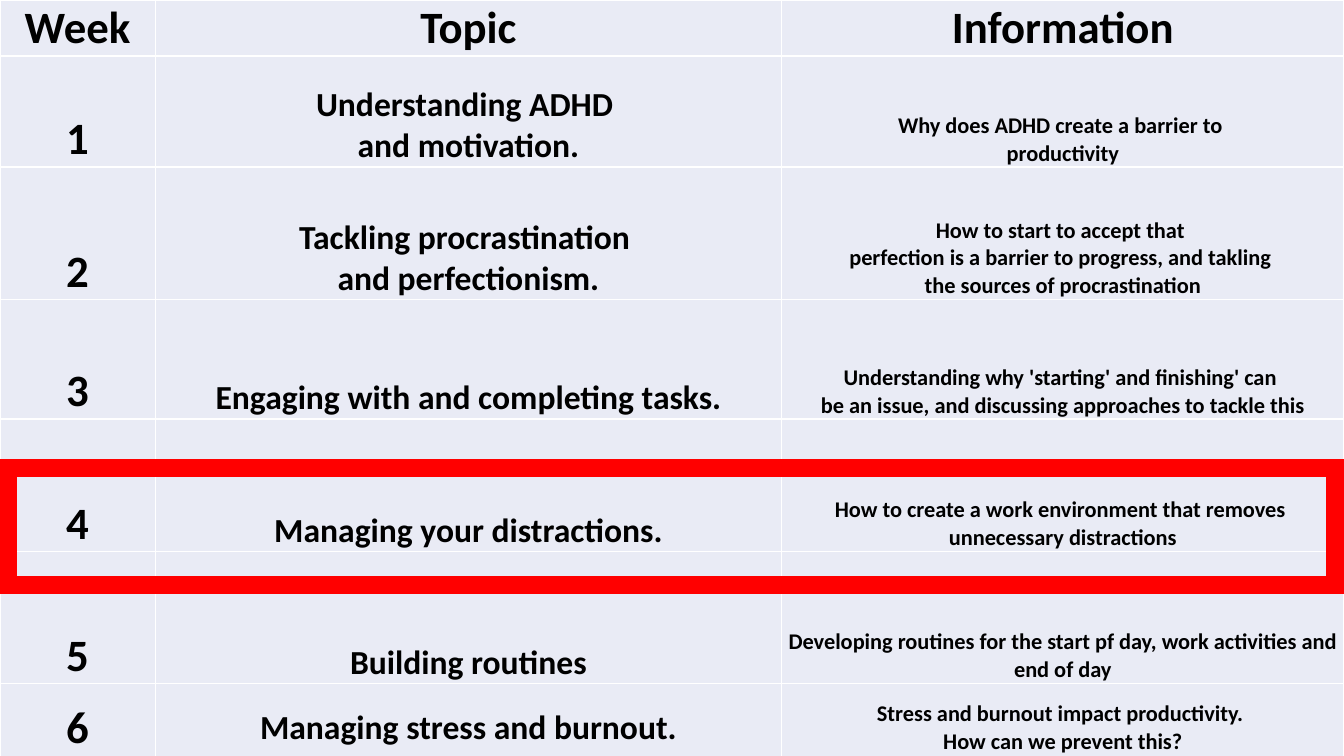
from copy import deepcopy

from lxml import etree
from pptx import Presentation
from pptx import util as u
from pptx.dml import color
from pptx.enum import shapes, text
from pptx.oxml import ns

COLOURS = {"text": "000000", "cell": "E9EBF5", "border": "FFFFFF", "highlight": "FF0000"}
SLIDE_SIZE = (u.Cm(33.87), u.Cm(19.05))
COLUMN_WIDTHS = (3.91, 15.79, 14.17)
ROW_HEIGHTS = (1.04, 2.8, 3.33, 3.02, 3.33, 3.33, 2.21)
HEADER_SIZES = (32, 32, 32)
BODY_SIZES = (32, 24, 16)
FONT = {"name": "Calibri", "bold": True}
CELL = {"margin_left": u.Cm(0.03), "margin_right": u.Cm(0.03),
        "margin_top": u.Cm(0.03), "margin_bottom": u.Cm(0)}

HEADER = ("Week", "Topic", "Information")
# Topic and information for each week, in order
WEEKS = (
    ("Understanding ADHD \nand motivation.",
     "Why does ADHD create a barrier to \nproductivity"),
    ("Tackling procrastination \nand perfectionism.",
     "How to start to accept that \nperfection is a barrier to progress, and takling \n"
     "the sources of procrastination"),
    ("Engaging with and completing tasks.",
     "Understanding why 'starting' and finishing' can \n"
     "be an issue, and discussing approaches to tackle this"),
    ("Managing your distractions.",
     "How to create a work environment that removes \nunnecessary distractions"),
    ("Building routines",
     "Developing routines for the start pf day, work activities and end of day"),
    ("Managing stress and burnout.",
     "Stress and burnout impact productivity. \nHow can we prevent this?"),
)


def rgb(name):
    return color.RGBColor.from_string(COLOURS[name])


def set_all(target, values):
    for name, value in values.items():
        setattr(target, name, value)


def add_borders(cell):
    properties = cell._tc.get_or_add_tcPr()
    for position, side in enumerate(("lnL", "lnR", "lnT", "lnB")):
        line = etree.Element(ns.qn(f"a:{side}"), w=str(u.Pt(1)))
        fill = etree.SubElement(line, ns.qn("a:solidFill"))
        etree.SubElement(fill, ns.qn("a:srgbClr"), val=COLOURS["border"])
        properties.insert(position, line)


def fill_cell(cell, words, size, anchor):
    set_all(cell, {**CELL, "vertical_anchor": anchor})
    cell.fill.solid()
    cell.fill.fore_color.rgb = rgb("cell")
    add_borders(cell)

    paragraph = cell.text_frame.paragraphs[0]
    paragraph.text = words
    paragraph.alignment = text.PP_ALIGN.CENTER
    for run in paragraph.runs:
        set_all(run.font, {**FONT, "size": u.Pt(size)})
        run.font.color.rgb = rgb("text")
    # Line breaks take the same format as the words
    for line_break in paragraph._p.findall(ns.qn("a:br")):
        line_break.append(deepcopy(paragraph.runs[0]._r.rPr))


def add_schedule(slide):
    rows = [HEADER] + [(str(week), *row) for week, row in enumerate(WEEKS, 1)]
    table = slide.shapes.add_table(len(rows), len(HEADER), u.Cm(0), u.Cm(0),
                                   SLIDE_SIZE[0], u.Cm(sum(ROW_HEIGHTS))).table
    set_all(table, {"first_row": False, "horz_banding": False})
    for column, width in zip(table.columns, COLUMN_WIDTHS):
        column.width = u.Cm(width)

    for index, (row, height, contents) in enumerate(zip(table.rows, ROW_HEIGHTS, rows)):
        row.height = u.Cm(height)
        sizes = BODY_SIZES if index else HEADER_SIZES
        is_last = index == len(rows) - 1
        anchor = text.MSO_ANCHOR.MIDDLE if is_last else text.MSO_ANCHOR.BOTTOM
        for cell, words, size in zip(row.cells, contents, sizes):
            fill_cell(cell, words, size, anchor)


def add_highlight(slide, top, height):
    frame = slide.shapes.add_shape(shapes.MSO_SHAPE.FRAME, u.Cm(0), u.Cm(top),
                                   SLIDE_SIZE[0], u.Cm(height))
    frame.shadow.inherit = False
    frame.fill.solid()
    frame.fill.fore_color.rgb = rgb("highlight")
    frame.line.color.rgb = rgb("highlight")
    frame.line.width = u.Pt(1)


def main():
    presentation = Presentation()
    presentation.slide_width, presentation.slide_height = SLIDE_SIZE
    slide = presentation.slides.add_slide(presentation.slide_layouts[6])

    # Weekly schedule
    add_schedule(slide)
    # Frame around the current week
    add_highlight(slide, top=11.58, height=3.38)

    presentation.save("out.pptx")


if __name__ == "__main__":
    main()
